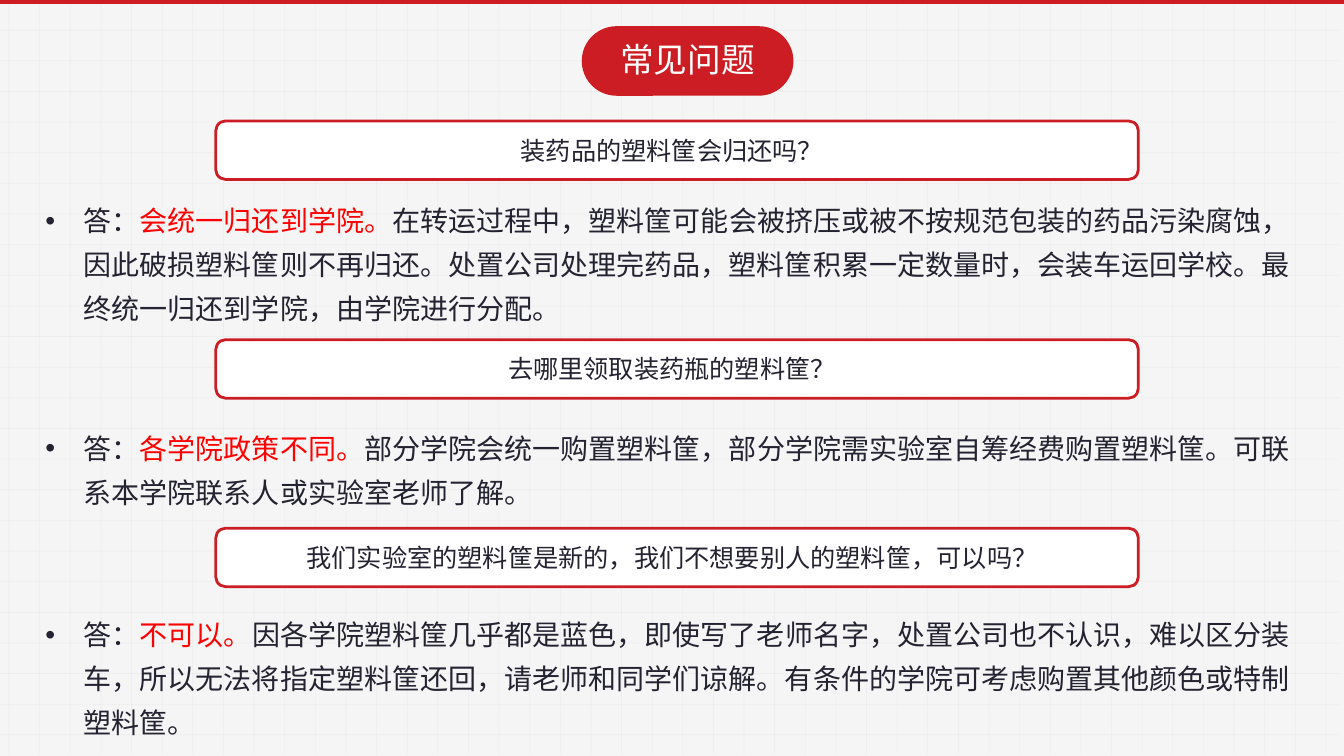
"""Builds the FAQ slide about returning plastic baskets."""
from dataclasses import dataclass

from lxml.etree import SubElement
from pptx import Presentation
from pptx.dml.color import RGBColor
from pptx.enum.lang import MSO_LANGUAGE_ID
from pptx.enum.shapes import MSO_CONNECTOR, MSO_SHAPE
from pptx.enum.text import MSO_ANCHOR, MSO_AUTO_SIZE, PP_ALIGN
from pptx.oxml.ns import qn
from pptx.util import Inches, Pt


@dataclass(frozen=True)
class Theme:
    font: str = "Noto Sans CJK SC"
    paper: str = "F5F5F5"
    grid: str = "8583A6"
    red: str = "CB1D23"
    accent: str = "FF0000"
    ink: str = "242331"
    white: str = "FFFFFF"
    title_size: int = 24
    question_size: int = 18
    answer_size: int = 20


class FaqSlide:
    def __init__(self, prs, theme):
        self.theme = theme
        self.s = prs.slides.add_slide(prs.slide_layouts[4])
        self.s.background.fill.solid()
        self.s.background.fill.fore_color.rgb = RGBColor.from_string(theme.paper)

    def run(self, p, text, size, color):
        r = p.add_run()
        r.text = text
        r.font.size = Pt(size)
        r.font.bold = False
        r.font.name = self.theme.font
        r.font.language_id = MSO_LANGUAGE_ID.SIMPLIFIED_CHINESE
        r.font.color.rgb = RGBColor.from_string(color)
        SubElement(r.font._element, qn("a:ea"), typeface=self.theme.font)

    def grid_line(self, group, x1, y1, x2, y2):
        line = group.shapes.add_connector(
            MSO_CONNECTOR.STRAIGHT, Inches(x1), Inches(y1), Inches(x2), Inches(y2))
        line.line.width = Pt(0.5)
        line.line.color.rgb = RGBColor.from_string(self.theme.grid)
        sp_pr = line.element.spPr
        color = sp_pr.find(".//" + qn("a:srgbClr"))
        SubElement(color, qn("a:alpha"), val="5000")
        SubElement(sp_pr, qn("a:effectLst"))

    def grid(self):
        group = self.s.shapes.add_group_shape()
        for i in range(44):
            x = 0.09 + i * (13.15 - 0.09) / 43
            self.grid_line(group, x, 0, x, 7.49)
        for i in range(24):
            y = 0.3 + i * (7.29 - 0.3) / 23
            self.grid_line(group, 0, y, 13.29, y)

    def box(self, kind, x, y, w, h, fill, outline=None):
        sp = self.s.shapes.add_shape(kind, Inches(x), Inches(y), Inches(w), Inches(h))
        sp.shadow.inherit = False
        sp.fill.solid()
        sp.fill.fore_color.rgb = RGBColor.from_string(fill)
        if outline:
            sp.line.color.rgb = RGBColor.from_string(outline)
            sp.line.width = Pt(2)
        else:
            sp.line.fill.background()
        return sp

    def place(self, sp, x, y, w, h):
        sp.left, sp.top, sp.width, sp.height = map(Inches, (x, y, w, h))
        sp.element.getparent().append(sp.element)
        tf = sp.text_frame
        tf.word_wrap = True
        tf.auto_size = MSO_AUTO_SIZE.SHAPE_TO_FIT_TEXT
        tf.vertical_anchor = MSO_ANCHOR.TOP
        return tf.paragraphs[0]

    def title(self, text):
        pill = self.box(MSO_SHAPE.ROUNDED_RECTANGLE, 5.77, 0.26, 2.1, 0.69, self.theme.red)
        pill.adjustments[0] = 0.5
        p = self.place(self.s.shapes.title, 5.86, 0.34, 1.92, 0.5)
        p.alignment = PP_ALIGN.CENTER
        self.run(p, text, self.theme.title_size, self.theme.white)

    def question(self, y, text):
        sp = self.box(MSO_SHAPE.ROUNDED_RECTANGLE, 2.14, y, 9.15, 0.58,
                      self.theme.white, self.theme.red)
        tf = sp.text_frame
        tf.word_wrap = True
        tf.vertical_anchor = MSO_ANCHOR.MIDDLE
        tf.margin_right = Inches(0.2)
        p = tf.paragraphs[0]
        p.alignment = PP_ALIGN.CENTER
        self.run(p, text, self.theme.question_size, self.theme.ink)

    def answer(self, idx, y, w, h, verdict, detail):
        p = self.place(self.s.placeholders[idx], 0.35, y, w, h)
        p.line_spacing = 1.3
        p.space_before = Pt(0)
        p_pr = p._p.get_or_add_pPr()
        p_pr.set("marL", str(Inches(0.38)))
        p_pr.set("indent", str(Inches(-0.38)))
        SubElement(p_pr, qn("a:buFont"), typeface="Arial")
        SubElement(p_pr, qn("a:buChar"), char="•")
        for text, color in (("答：", self.theme.ink), (verdict, self.theme.accent),
                            (detail, self.theme.ink)):
            self.run(p, text, self.theme.answer_size, color)

    def remove_empty(self):
        for sp in list(self.s.placeholders):
            if not sp.text_frame.text:
                sp.element.getparent().remove(sp.element)


FAQ = [
    (1.2, "装药品的塑料筐会归还吗？", 1.87, 12.77, 1.37, "会统一归还到学院。",
     "在转运过程中，塑料筐可能会被挤压或被不按规范包装的药品污染腐蚀，因此破损塑料筐则不再归还。"
     "处置公司处理完药品，塑料筐积累一定数量时，会装车运回学校。最终统一归还到学院，由学院进行分配。"),
    (3.37, "去哪里领取装药瓶的塑料筐？", 4.13, 12.77, 0.93, "各学院政策不同。",
     "部分学院会统一购置塑料筐，部分学院需实验室自筹经费购置塑料筐。"
     "可联系本学院联系人或实验室老师了解。"),
    (5.24, "我们实验室的塑料筐是新的，我们不想要别人的塑料筐，可以吗？", 5.98, 12.69, 1.37, "不可以。",
     "因各学院塑料筐几乎都是蓝色，即使写了老师名字，处置公司也不认识，难以区分装车，"
     "所以无法将指定塑料筐还回，请老师和同学们谅解。有条件的学院可考虑购置其他颜色或特制塑料筐。"),
]


def main():
    prs = Presentation()
    prs.slide_width, prs.slide_height = Inches(13.33), Inches(7.5)
    theme = Theme()
    faq = FaqSlide(prs, theme)
    faq.grid()
    faq.box(MSO_SHAPE.RECTANGLE, 0, 0, 13.33, 0.04, theme.red)
    faq.title("常见问题")
    for idx, (top, question, y, w, h, verdict, detail) in enumerate(FAQ, start=1):
        faq.question(top, question)
        faq.answer(idx, y, w, h, verdict, detail)
    faq.remove_empty()
    prs.save("out.pptx")


if __name__ == "__main__":
    main()
